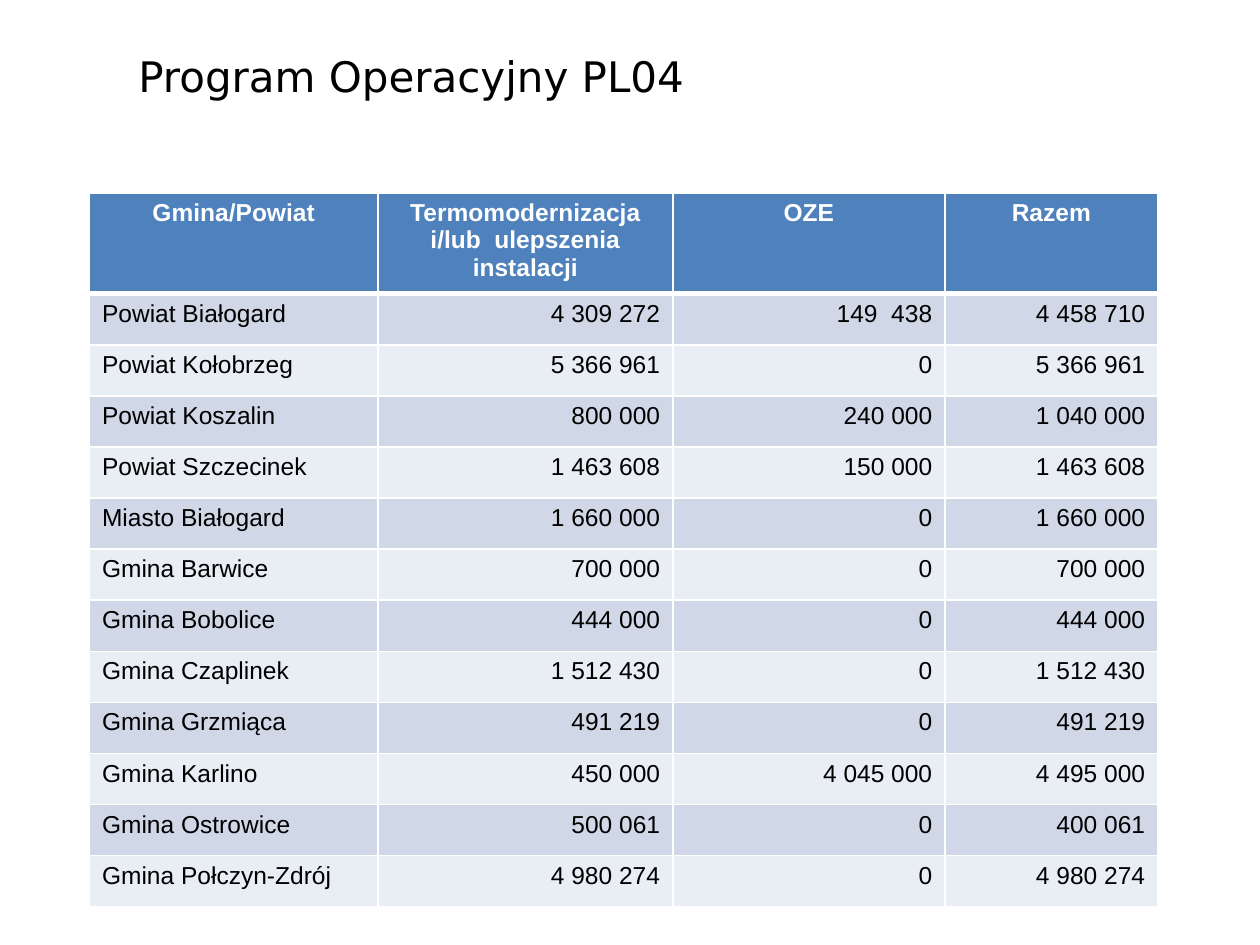
from dataclasses import dataclass

import pptx
import pptx.dml.color
import pptx.enum.text
import pptx.oxml
import pptx.oxml.ns
import pptx.util
from pptx.util import Inches

ALIGN = pptx.enum.text.PP_ALIGN


@dataclass(frozen=True)
class Theme:
    title_font: str = "DejaVu Sans"
    table_font: str = "Arial"
    title_size: int = 24
    table_size: int = 14
    ink: str = "000000"
    paper: str = "FFFFFF"
    header: str = "4F81BD"
    bands: tuple[str, str] = ("D0D8E8", "E9EDF4")
    rule: int = 1
    header_rule: int = 3


@dataclass(frozen=True)
class Grant:
    area: str
    insulation: str
    renewables: str
    total: str

    def cells(self) -> tuple[str, ...]:
        return self.area, self.insulation, self.renewables, self.total


THEME = Theme()
WIDTH, HEIGHT = 10, 7.5
COLUMNS = (2.29, 2.34, 2.16, 1.69)
HEADER_HEIGHT, TABLE_HEIGHT = 0.8, 5.67
HEADER = Grant("Gmina/Powiat", "Termomodernizacja i/lub  ulepszenia instalacji", "OZE", "Razem")
GRANTS = (
    Grant("Powiat Białogard", "4 309 272", "149  438", "4 458 710"),
    Grant("Powiat Kołobrzeg", "5 366 961", "0", "5 366 961"),
    Grant("Powiat Koszalin", "800 000", "240 000", "1 040 000"),
    Grant("Powiat Szczecinek", "1 463 608", "150 000", "1 463 608"),
    Grant("Miasto Białogard", "1 660 000", "0", "1 660 000"),
    Grant("Gmina Barwice", "700 000", "0", "700 000"),
    Grant("Gmina Bobolice", "444 000", "0", "444 000"),
    Grant("Gmina Czaplinek", "1 512 430", "0", "1 512 430"),
    Grant("Gmina Grzmiąca", "491 219", "0", "491 219"),
    Grant("Gmina Karlino", "450 000", "4 045 000", "4 495 000"),
    Grant("Gmina Ostrowice", "500 061", "0", "400 061"),
    Grant("Gmina Połczyn-Zdrój", "4 980 274", "0", "4 980 274"),
)


def rgb(color: str) -> pptx.dml.color.RGBColor:
    return pptx.dml.color.RGBColor.from_string(color)


def write(tf, text: str, *, font: str = THEME.table_font, size: int = THEME.table_size,
          color: str = THEME.ink, bold: bool = False, align=ALIGN.LEFT) -> None:
    p = tf.paragraphs[0]
    p.alignment = align
    r = p.add_run()
    r.text = text
    r.font.name, r.font.size, r.font.bold = font, pptx.util.Pt(size), bold
    r.font.color.rgb = rgb(color)


def set_borders(cell, top: int, bottom: int) -> None:
    """Draw white cell borders; must run before the fill is set, as XML order matters."""
    tc_pr = cell._tc.get_or_add_tcPr()
    for side, width in (("L", THEME.rule), ("R", THEME.rule), ("T", top), ("B", bottom)):
        tc_pr.append(pptx.oxml.parse_xml(
            f'<a:ln{side} {pptx.oxml.ns.nsdecls("a")} w="{pptx.util.Pt(width)}">'
            f'<a:solidFill><a:srgbClr val="{THEME.paper}"/></a:solidFill></a:ln{side}>'))


def add_title(s, text: str) -> None:
    sp = s.shapes.add_textbox(Inches(0.1 * WIDTH), Inches(0.35), Inches(5.68), Inches(0.5))
    tf = sp.text_frame
    tf.word_wrap = True
    tf.auto_size = pptx.enum.text.MSO_AUTO_SIZE.SHAPE_TO_FIT_TEXT
    write(tf, text, font=THEME.title_font, size=THEME.title_size)
    p_pr = tf.paragraphs[0]._p.get_or_add_pPr()
    p_pr.set("marL", str(Inches(0.38)))
    p_pr.set("indent", str(-Inches(0.38)))


def add_grants_table(s, header: Grant, grants: tuple[Grant, ...]) -> None:
    rows = (header, *grants)
    table = s.shapes.add_table(len(rows), len(COLUMNS), Inches(0.71), Inches(1.53),
                               Inches(sum(COLUMNS)), Inches(TABLE_HEIGHT)).table
    for column, width in zip(table.columns, COLUMNS):
        column.width = Inches(width)
    body_height = (TABLE_HEIGHT - HEADER_HEIGHT) / len(grants)
    for i, grant in enumerate(rows):
        is_header = i == 0
        table.rows[i].height = Inches(HEADER_HEIGHT if is_header else body_height)
        for j, text in enumerate(grant.cells()):
            cell = table.cell(i, j)
            set_borders(cell, top=THEME.header_rule if i == 1 else THEME.rule,
                        bottom=THEME.header_rule if is_header else THEME.rule)
            cell.fill.solid()
            cell.fill.fore_color.rgb = rgb(THEME.header if is_header else THEME.bands[(i - 1) % 2])
            if is_header:
                write(cell.text_frame, text, color=THEME.paper, bold=True, align=ALIGN.CENTER)
            else:
                write(cell.text_frame, text, align=ALIGN.RIGHT if j else ALIGN.LEFT)


def main() -> None:
    prs = pptx.Presentation()
    prs.slide_width, prs.slide_height = Inches(WIDTH), Inches(HEIGHT)
    s = prs.slides.add_slide(prs.slide_layouts[6])
    add_title(s, "Program Operacyjny PL04")
    add_grants_table(s, HEADER, GRANTS)
    prs.save("out.pptx")


if __name__ == "__main__":
    main()
